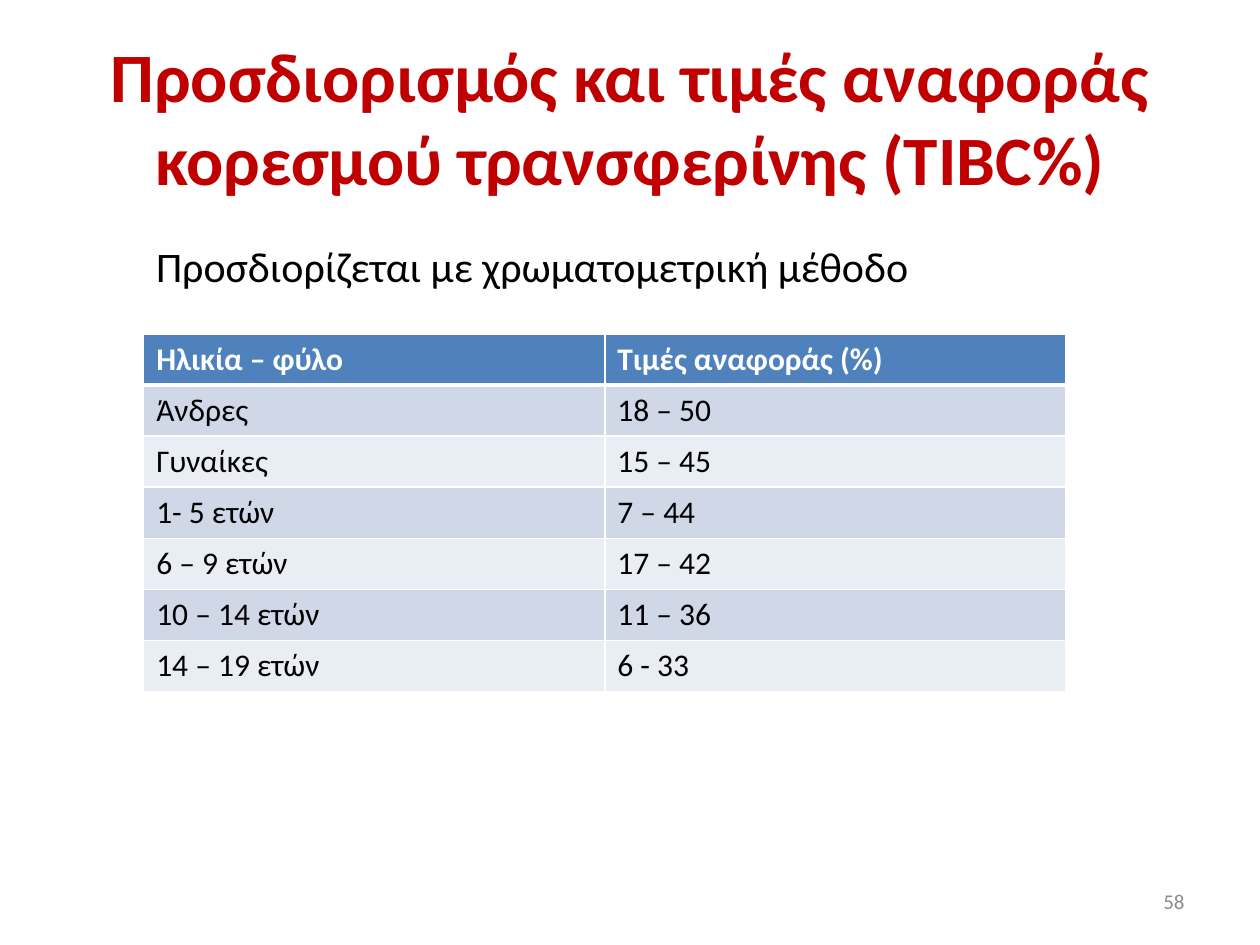
import pptx
import pptx.util
import pptx.dml.color
import pptx.enum.text
import lxml.etree
from pptx.oxml.ns import qn

Inches = pptx.util.Inches
Pt = pptx.util.Pt
Align = pptx.enum.text.PP_ALIGN
Anchor = pptx.enum.text.MSO_ANCHOR

RED, GREY, BLACK, WHITE = "C00000", "8C8C8C", "000000", "FFFFFF"
HEAD, BANDS = "4F81BD", ("D0D8E8", "E9EDF4")


def color(code):
    return pptx.dml.color.RGBColor.from_string(code)


class Deck:
    font = "Calibri"

    def __init__(self, wide, high):
        self.prs = pptx.Presentation()
        self.prs.slide_width = Inches(wide)
        self.prs.slide_height = Inches(high)
        self.slide = self.prs.slides.add_slide(self.prs.slide_layouts[6])

    def run(self, para, text, size, code, bold=False):
        run = para.add_run()
        run.text = text
        run.font.name = self.font
        run.font.size = Pt(size)
        run.font.bold = bold
        run.font.color.rgb = color(code)

    def text(self, box, text, size, code, bold=False,
             align=Align.LEFT, anchor=Anchor.TOP):
        shape = self.slide.shapes.add_textbox(*map(Inches, box))
        frame = shape.text_frame
        frame.word_wrap = True
        frame.vertical_anchor = anchor
        para = frame.paragraphs[0]
        para.alignment = align
        self.run(para, text, size, code, bold)

    def edge(self, cell, side, width):
        props = cell._tc.get_or_add_tcPr()
        line = lxml.etree.SubElement(props, qn("a:ln" + side), w=str(Pt(width)))
        fill = lxml.etree.SubElement(line, qn("a:solidFill"))
        lxml.etree.SubElement(fill, qn("a:srgbClr"), val=WHITE)

    def table(self, box, rows, size):
        shape = self.slide.shapes.add_table(
            len(rows), len(rows[0]), *map(Inches, box))
        for i, row in enumerate(rows):
            for j, text in enumerate(row):
                cell = shape.table.cell(i, j)
                # The rule between header and body is thicker
                widths = {"L": 1, "R": 1,
                          "T": 3 if i == 1 else 1, "B": 3 if i == 0 else 1}
                for side, width in widths.items():
                    self.edge(cell, side, width)
                head = i == 0
                cell.fill.solid()
                cell.fill.fore_color.rgb = color(
                    HEAD if head else BANDS[(i - 1) % 2])
                self.run(cell.text_frame.paragraphs[0], text, size,
                         WHITE if head else BLACK, head)


def main():
    deck = Deck(10, 7.5)

    # Title
    deck.text((0.5, 0.3, 9, 1.25),
              "Προσδιορισμός και τιμές αναφοράς κορεσμού τρανσφερίνης (TIBC%)",
              39.6, RED, True, Align.CENTER, Anchor.MIDDLE)

    # Slide number
    deck.text((7.17, 6.95, 2.33, 0.4), "58", 12, GREY,
              align=Align.RIGHT, anchor=Anchor.MIDDLE)

    # Method
    deck.text((1.14, 1.86, 7.48, 0.5),
              "Προσδιορίζεται με χρωματομετρική μέθοδο", 24, BLACK)

    # Reference values
    rows = [
        ("Hλικία – φύλο", "Τιμές αναφοράς (%)"),
        ("Άνδρες", "18 – 50"),
        ("Γυναίκες", "15 – 45"),
        ("1- 5 ετών", "7 – 44"),
        ("6 – 9 ετών", "17 – 42"),
        ("10 – 14 ετών", "11 – 36"),
        ("14 – 19 ετών", "6 - 33"),
    ]
    deck.table((1.14, 2.65, 7.32, 2.84), rows, 18)

    deck.prs.save("out.pptx")


if __name__ == "__main__":
    main()
